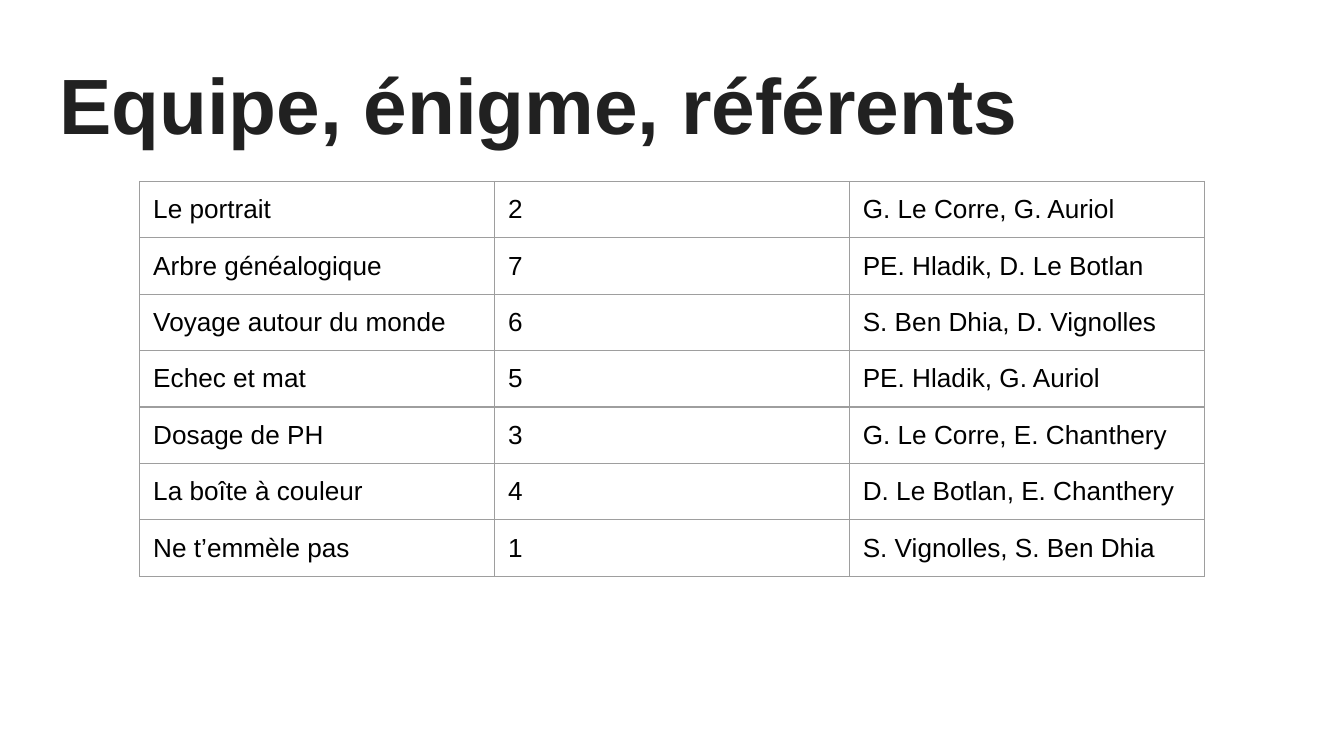
from lxml import etree
from pptx import Presentation, util as u
from pptx.dml.color import RGBColor
from pptx.enum import text
from pptx.oxml import ns

INK = RGBColor(0x21, 0x21, 0x21)
BLACK = RGBColor(0, 0, 0)
WHITE = RGBColor(0xFF, 0xFF, 0xFF)
GRID = RGBColor(0x9E, 0x9E, 0x9E)
FONT = "Arial"
PADDING = u.Inches(0.1)
TEAMS = [
    ("Le portrait", "2", "G. Le Corre, G. Auriol"),
    ("Arbre généalogique", "7", "PE. Hladik, D. Le Botlan"),
    ("Voyage autour du monde", "6", "S. Ben Dhia, D. Vignolles"),
    ("Echec et mat", "5", "PE. Hladik, G. Auriol"),
    ("Dosage de PH", "3", "G. Le Corre, E. Chanthery"),
    ("La boîte à couleur", "4", "D. Le Botlan, E. Chanthery"),
    ("Ne t’emmèle pas", "1", "S. Vignolles, S. Ben Dhia"),
]


def write(paragraph, wording, size, color, bold=False):
    """Add one left-aligned run to a paragraph."""
    paragraph.alignment = text.PP_ALIGN.LEFT
    run = paragraph.add_run()
    run.text = wording
    run.font.name = FONT
    run.font.size = u.Pt(size)
    run.font.bold = bold
    run.font.color.rgb = color


def add_heading(slide, box):
    """Place the title placeholder in its box and fill it."""
    heading = slide.shapes.title
    heading.left, heading.top, heading.width, heading.height = box
    frame = heading.text_frame
    frame.word_wrap = True
    frame.auto_size = text.MSO_AUTO_SIZE.NONE
    frame.vertical_anchor = text.MSO_ANCHOR.TOP
    frame.margin_left = frame.margin_right = PADDING
    frame.margin_top = frame.margin_bottom = PADDING
    write(frame.paragraphs[0], "Equipe, énigme, référents", 42, INK, bold=True)


def outline(cell):
    """Draw a thin grey border on all four sides of a cell."""
    properties = cell._tc.get_or_add_tcPr()
    for position, side in enumerate(("a:lnL", "a:lnR", "a:lnT", "a:lnB")):
        border = etree.Element(ns.qn(side), w=str(u.Pt(0.75)))
        fill = etree.SubElement(border, ns.qn("a:solidFill"))
        etree.SubElement(fill, ns.qn("a:srgbClr"), val=str(GRID))
        properties.insert(position, border)


def add_teams(slide, box):
    """Lay out teams, riddles and referents in an even table."""
    teams = slide.shapes.add_table(len(TEAMS), len(TEAMS[0]), *box).table
    teams.first_row = teams.horz_banding = False
    for row, entries in enumerate(TEAMS):
        for column, entry in enumerate(entries):
            cell = teams.cell(row, column)
            cell.margin_left = cell.margin_right = PADDING
            cell.margin_top = cell.margin_bottom = PADDING
            cell.vertical_anchor = text.MSO_ANCHOR.TOP
            cell.fill.background()
            outline(cell)
            write(cell.text_frame.paragraphs[0], entry, 14, BLACK)


def main():
    """Build and save the slide."""
    deck = Presentation()
    deck.slide_width = u.Inches(10)
    deck.slide_height = deck.slide_width * 9 // 16
    slide = deck.slides.add_slide(deck.slide_layouts[5])
    slide.background.fill.solid()
    slide.background.fill.fore_color.rgb = WHITE
    add_heading(slide, [u.Inches(side) for side in (0.34, 0.32, 9.32, 0.88)])
    add_teams(slide, [u.Inches(side) for side in (1.04, 1.35, 7.92, 0.42 * len(TEAMS))])
    deck.save("out.pptx")


if __name__ == "__main__":
    main()
